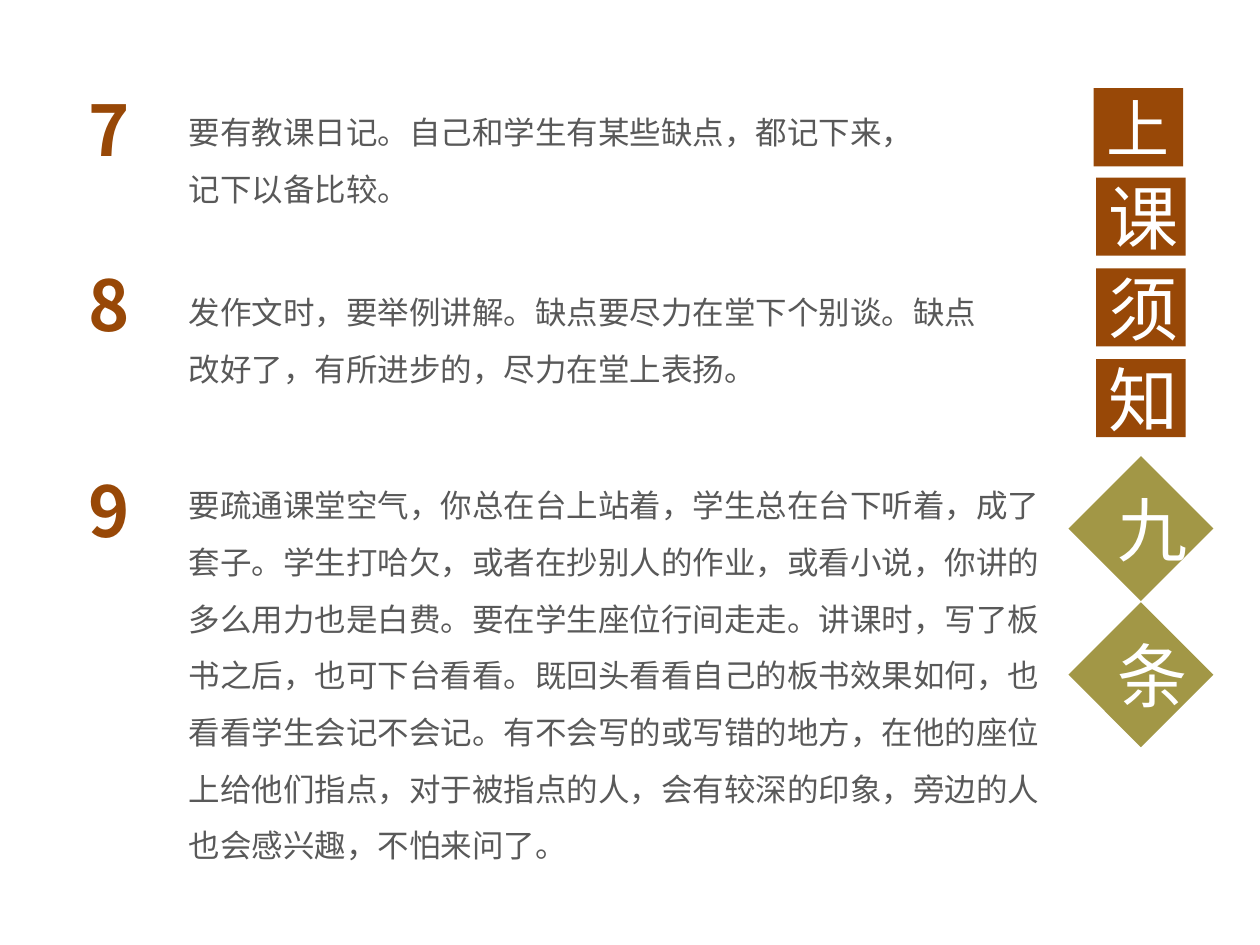
from dataclasses import dataclass

from lxml.etree import SubElement
from pptx import Presentation
from pptx.dml.color import RGBColor
from pptx.enum.shapes import MSO_SHAPE
from pptx.enum.text import MSO_ANCHOR, MSO_AUTO_SIZE, PP_ALIGN
from pptx.oxml.ns import qn
from pptx.slide import Slide
from pptx.text.text import TextFrame
from pptx.util import Inches, Pt


@dataclass(frozen=True)
class Theme:
    brown: RGBColor = RGBColor(0x98, 0x48, 0x07)
    olive: RGBColor = RGBColor(0xA2, 0x97, 0x46)
    grey: RGBColor = RGBColor(0x59, 0x59, 0x59)
    white: RGBColor = RGBColor(0xFF, 0xFF, 0xFF)
    text_font: str = "Noto Sans CJK SC"
    tile_font: str = "Noto Sans CJK JP"
    number_size: int = 40
    body_size: int = 18
    tile_size: int = 40
    first_tile_size: int = 36


@dataclass(frozen=True)
class Rule:
    number: str
    number_top: float
    text_top: float
    width: float
    height: float
    text: str


@dataclass(frozen=True)
class Tile:
    character: str
    left: float
    top: float
    width: float
    height: float
    kind: MSO_SHAPE
    fill: RGBColor
    size: int


THEME = Theme()

RULES = [
    Rule("7", 0.64, 0.7, 6.03, 1.01,
         "要有教课日记。自己和学生有某些缺点，都记下来，记下以备比较。"),
    Rule("8", 2.03, 2.13, 6.65, 1.01,
         "发作文时，要举例讲解。缺点要尽力在堂下个别谈。缺点改好了，有所进步的，尽力在堂上表扬。"),
    Rule("9", 3.66, 3.66, 6.97, 3.28,
         "要疏通课堂空气，你总在台上站着，学生总在台下听着，成了套子。"
         "学生打哈欠，或者在抄别人的作业，或看小说，你讲的多么用力也是白费。"
         "要在学生座位行间走走。讲课时，写了板书之后，也可下台看看。"
         "既回头看看自己的板书效果如何，也看看学生会记不会记。"
         "有不会写的或写错的地方，在他的座位上给他们指点，对于被指点的人，"
         "会有较深的印象，旁边的人也会感兴趣，不怕来问了。"),
]

# Vertical heading: four squares, then two diamonds
SQUARES = [
    Tile(character, 8.7 if row else 8.68, 0.7 + 0.72 * row - (0.01 if row else 0),
         0.71, 0.62, MSO_SHAPE.RECTANGLE, THEME.brown,
         THEME.tile_size if row else THEME.first_tile_size)
    for row, character in enumerate("上课须知")
]
DIAMONDS = [
    Tile(character, 8.48, 3.62 + 1.16 * row, 1.15, 1.15,
         MSO_SHAPE.DIAMOND, THEME.olive, THEME.tile_size)
    for row, character in enumerate("九条")
]


def write_run(frame: TextFrame, text: str, size: int, color: RGBColor,
              font_name: str, bold: bool = False) -> None:
    run = frame.paragraphs[0].add_run()
    run.text = text
    run.font.size = Pt(size)
    run.font.bold = bold
    run.font.color.rgb = color
    run.font.name = font_name
    # Chinese characters take the East Asian typeface
    SubElement(run.font._element, qn("a:ea"), typeface=font_name)


def add_text_frame(slide: Slide, left: float, top: float,
                   width: float, height: float) -> TextFrame:
    box = slide.shapes.add_textbox(
        Inches(left), Inches(top), Inches(width), Inches(height))
    frame = box.text_frame
    frame.word_wrap = True
    frame.auto_size = MSO_AUTO_SIZE.SHAPE_TO_FIT_TEXT
    return frame


def add_rule(slide: Slide, rule: Rule) -> None:
    number = add_text_frame(slide, 0.6, rule.number_top, 0.48, 0.77)
    write_run(number, rule.number, THEME.number_size, THEME.brown,
              THEME.text_font, bold=True)
    body = add_text_frame(slide, 1.4, rule.text_top, rule.width, rule.height)
    body.paragraphs[0].line_spacing = 1.5
    write_run(body, rule.text, THEME.body_size, THEME.grey, THEME.text_font)


def add_tile(slide: Slide, tile: Tile) -> None:
    shape = slide.shapes.add_shape(
        tile.kind, Inches(tile.left), Inches(tile.top),
        Inches(tile.width), Inches(tile.height))
    shape.shadow.inherit = False
    shape.fill.solid()
    shape.fill.fore_color.rgb = tile.fill
    shape.line.fill.background()
    frame = shape.text_frame
    frame.word_wrap = True
    frame.vertical_anchor = MSO_ANCHOR.MIDDLE
    frame.paragraphs[0].alignment = PP_ALIGN.CENTER
    write_run(frame, tile.character, tile.size, THEME.white, THEME.tile_font)


def main() -> None:
    presentation = Presentation()
    presentation.slide_width = Inches(10)
    presentation.slide_height = Inches(7.5)
    slide = presentation.slides.add_slide(presentation.slide_layouts[6])
    # Numbered rules
    for rule in RULES:
        add_rule(slide, rule)
    # Heading tiles
    for tile in SQUARES + DIAMONDS:
        add_tile(slide, tile)
    presentation.save("out.pptx")


if __name__ == "__main__":
    main()
